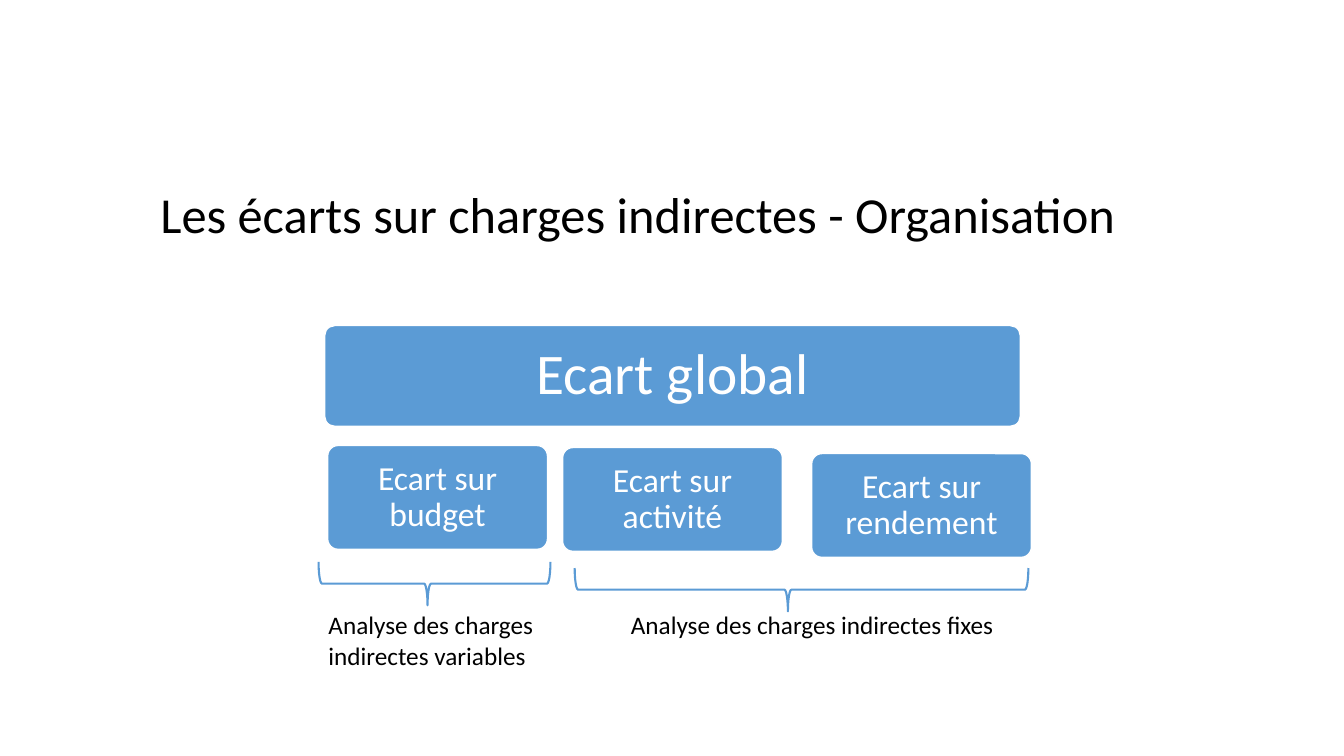
from pptx import Presentation
from pptx.dml.color import RGBColor
from pptx.enum.shapes import MSO_SHAPE as Shape
from pptx.enum.text import MSO_ANCHOR as Anchor, MSO_AUTO_SIZE as AutoSize, PP_ALIGN as Align
from pptx.util import Inches, Pt

BLUE, BLACK, WHITE = "5B9BD5", "000000", "FFFFFF"


def set_color(color_format, value):
    color_format.rgb = RGBColor.from_string(value)


class OrganisationSlide:
    font = "Calibri"
    brace_depth = 0.43

    def __init__(self, deck):
        self.page = deck.slides.add_slide(deck.slide_layouts[0])
        subtitle = self.page.placeholders[1].element
        subtitle.getparent().remove(subtitle)

    def set_text(self, frame, text, size, color, align, line_spacing=1.0):
        frame.word_wrap = True
        frame.text = text
        para = frame.paragraphs[0]
        para.alignment = align
        para.line_spacing = line_spacing
        span = para.runs[0]
        span.font.name = self.font
        span.font.size = Pt(size)
        set_color(span.font.color, color)

    def title(self, text, left, top, width, height):
        title = self.page.shapes.title
        title.left, title.top = Inches(left), Inches(top)
        title.width, title.height = Inches(width), Inches(height)
        frame = title.text_frame
        frame.vertical_anchor = Anchor.BOTTOM
        frame.auto_size = AutoSize.NONE
        self.set_text(frame, text, 36, BLACK, Align.LEFT, 0.9)

    def shape(self, kind, left, top, width, height, line, weight):
        shape = self.page.shapes.add_shape(
            kind, Inches(left), Inches(top), Inches(width), Inches(height))
        shape.shadow.inherit = False
        set_color(shape.line.color, line)
        shape.line.width = Pt(weight)
        return shape

    def box(self, text, left, top, width, height, size, margin):
        box = self.shape(Shape.ROUNDED_RECTANGLE, left, top, width, height, WHITE, 1)
        box.adjustments[0] = 0.1
        box.fill.solid()
        set_color(box.fill.fore_color, BLUE)
        frame = box.text_frame
        frame.vertical_anchor = Anchor.MIDDLE
        frame.margin_left = frame.margin_right = Inches(margin)
        frame.margin_top = frame.margin_bottom = Inches(margin)
        self.set_text(frame, text, size, WHITE, Align.CENTER, 0.9)

    def brace_below(self, center, middle, span):
        """Draw a brace of the given horizontal span, pointing down."""
        brace = self.shape(Shape.LEFT_BRACE, center - self.brace_depth / 2,
                           middle - span / 2, self.brace_depth, span, BLUE, 1.5)
        brace.rotation = 270
        brace.adjustments[0], brace.adjustments[1] = 0.08, 0.47
        brace.fill.background()

    def caption(self, text, left, width, height, align):
        box = self.page.shapes.add_textbox(
            Inches(left), Inches(6), Inches(width), Inches(height))
        self.set_text(box.text_frame, text, 18, BLACK, align)
        box.text_frame.auto_size = AutoSize.SHAPE_TO_FIT_TEXT


def main():
    deck = Presentation()
    deck.slide_width, deck.slide_height = Inches(13.33), Inches(7.5)
    slide = OrganisationSlide(deck)
    slide.title("Les écarts sur charges indirectes - Organisation", 1.49, 1.48, 10, 1)
    slide.box("Ecart global", 3.22, 3.23, 6.9, 1, 41, 0.2)
    for name, left, top in (("budget", 3.25, 4.42),
                            ("activité", 5.58, 4.44),
                            ("rendement", 8.05, 4.5)):
        slide.box(f"Ecart sur {name}", left, top, 2.18, 1.03, 24, 0.13)
    slide.caption("Analyse des charges indirectes variables", 3.16, 2.36, 0.71, Align.LEFT)
    slide.caption("Analyse des charges indirectes fixes", 5.7, 4.71, 0.4, Align.CENTER)
    slide.brace_below(4.31, 5.79, 2.3)
    slide.brace_below(7.95, 5.85, 4.5)
    deck.save("out.pptx")


if __name__ == "__main__":
    main()
